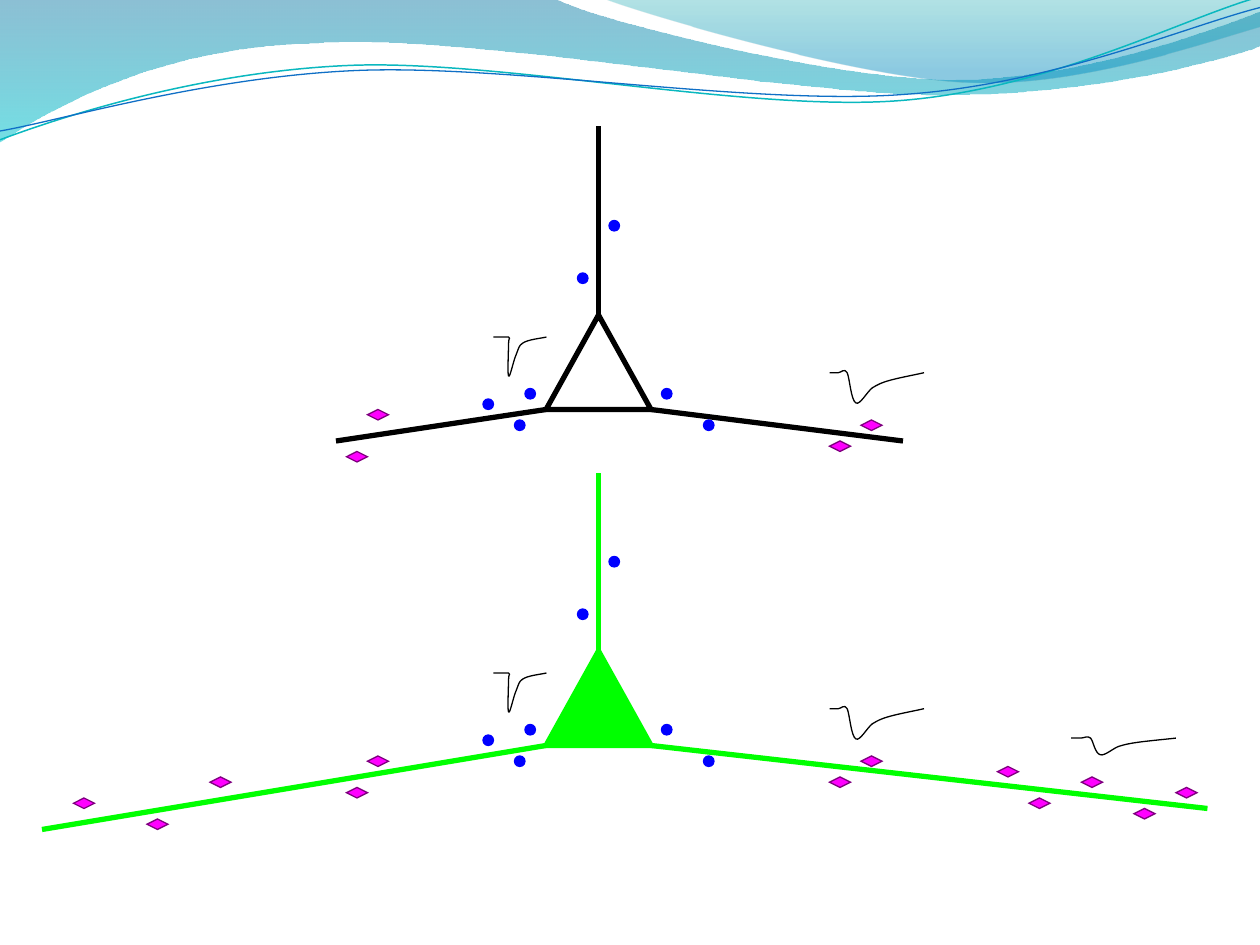
import dataclasses

import lxml.etree
import pptx
import pptx.dml.color
import pptx.enum.shapes
import pptx.oxml.ns
import pptx.util

Cm, Pt = pptx.util.Cm, pptx.util.Pt
RGB = pptx.dml.color.RGBColor.from_string
SHAPE = pptx.enum.shapes.MSO_SHAPE
qn = pptx.oxml.ns.qn

INCH = 12
STEP = 2.54 / INCH
ROW_GAP = 32

BAND_WIDE = [
    (0, 0), (4.4, -0.01), (4.76, 0.17, 6.64, 0.63, 7.58, 0.63),
    (8.53, 0.63, 9.58, 0.26, 10, 0.09), (10.01, 0.36),
    (9.83, 0.44, 8.7, 0.76, 7.46, 0.75), (6.22, 0.75, 3.82, 0.28, 2.57, 0.34),
    (1.29, 0.36, 0.46, 0.83, -0.01, 1.13), (0, 0),
]
BAND_RIGHT = [
    (4.79, -0.01), (5.09, 0.11, 6.82, 0.62, 7.69, 0.65),
    (8.56, 0.69, 9.61, 0.32, 10, 0.21), (10, 0), (4.79, -0.01),
]
WAVE_TEAL = [
    (0, 1.11), (0.48, 0.93, 1.58, 0.57, 2.77, 0.52),
    (3.95, 0.47, 5.93, 0.89, 7.13, 0.8), (8.33, 0.71, 9.38, 0.15, 9.98, -0.02),
]
WAVE_BLUE = [
    (0, 1.04), (0.47, 0.96, 1.64, 0.61, 2.83, 0.56),
    (4.03, 0.51, 5.97, 0.84, 7.17, 0.75), (8.36, 0.67, 9.41, 0.21, 10, 0.06),
]
FAST_TRACE = [
    (0, 0), (0.05, 0, 0.1, 0, 0.12, 0), (0.14, 0.01, 0.12, 0, 0.12, 0.05),
    (0.12, 0.1, 0.11, 0.3, 0.12, 0.31), (0.13, 0.33, 0.16, 0.18, 0.18, 0.14),
    (0.2, 0.09, 0.2, 0.07, 0.23, 0.05), (0.27, 0.02, 0.38, 0.01, 0.42, 0),
]
SLOW_TRACE = [
    (0, 0), (0.03, 0, 0.05, 0, 0.07, 0), (0.09, 0, 0.12, -0.04, 0.14, 0),
    (0.16, 0.04, 0.17, 0.22, 0.21, 0.24), (0.24, 0.26, 0.3, 0.15, 0.34, 0.12),
    (0.39, 0.09, 0.41, 0.08, 0.48, 0.06), (0.55, 0.04, 0.71, 0.01, 0.75, 0),
]
DOTS = [(46, 38), (49, 40), (55, 26), (67, 40), (63, 37), (50, 37), (58, 21)]
SHORT_DIAMONDS = [(33, 43), (35, 39), (79, 42), (82, 40)]
LONG_DIAMONDS = [(33, 75), (35, 72), (79, 74), (82, 72)]
EXTRA_DIAMONDS = [
    (20, 74), (7, 76), (14, 78), (112, 75),
    (108, 77), (103, 74), (98, 76), (95, 73),
]


@dataclasses.dataclass(frozen=True)
class Theme:
    ink: str = "000000"
    paper: str = "FFFFFF"
    grown: str = "00FF00"
    dot: str = "0000FF"
    diamond: str = "FF00FF"
    diamond_edge: str = "800080"
    teal: str = "0AB8BF"
    blue: str = "0F6FC6"
    wide_stops: tuple = ((0, "0074A1", 45), (1, "00C6CF", 55))
    right_stops: tuple = ((0, "00A1A9", 30), (0.8, "008BBF", 45))
    thick: float = 3
    medium: float = 0.85
    thin: float = 0.75


def grid(*values):
    return [Cm(v * STEP) for v in values]


def apply(obj, values):
    for name, value in values.items():
        setattr(obj, name, value)


def bend(sp, segments):
    steps = iter(list(sp.element.iter(qn("a:lnTo"))))
    for seg in segments[1:]:
        step = next(steps)
        if len(seg) == 6:
            step.addprevious(curve := step.makeelement(qn("a:cubicBezTo")))
            for part in (step, next(steps), next(steps)):
                curve.append(part[0])
                part.getparent().remove(part)


class Sketch:
    """Draws styled elements on the current slide."""

    def __init__(self, s, theme):
        self.s, self.theme = s, theme

    def stroke(self, sp, color, width):
        apply(sp.line, {"width": Pt(width)})
        apply(sp.line.color, {"rgb": RGB(color)})

    def shape(self, kind, box, fill, edge, width):
        sp = self.s.shapes.add_shape(kind, *grid(*box))
        sp.shadow.inherit = False
        sp.fill.solid()
        apply(sp.fill.fore_color, {"rgb": RGB(fill)})
        self.stroke(sp, edge, width)
        miter = lxml.etree.SubElement(sp.element.spPr.find(qn("a:ln")), qn("a:miter"))
        miter.set("lim", "800000")

    def line(self, start, end, color):
        sp = self.s.shapes.add_connector(
            pptx.enum.shapes.MSO_CONNECTOR.STRAIGHT, *grid(*start, *end))
        self.stroke(sp, color, self.theme.thick)
        lxml.etree.SubElement(sp.element.spPr, qn("a:effectLst"))

    def outline(self, segments, origin=(0, 0), stretch=(1, 1), closed=False):
        pairs = [seg[i:i + 2] for seg in segments for i in range(0, len(seg), 2)]
        points = [grid(*(o + v * k * INCH for o, v, k in zip(origin, p, stretch)))
                  for p in pairs]
        builder = self.s.shapes.build_freeform(*points[0])
        builder.add_line_segments(points[1:], close=closed)
        sp = builder.convert_to_shape()
        bend(sp, segments)
        sp.shadow.inherit = False
        return sp

    def curve(self, segments, color, width, **place):
        sp = self.outline(segments, **place)
        sp.fill.background()
        self.stroke(sp, color, width)

    def trace(self, segments, origin, stretch=(1, 1)):
        self.curve(segments, self.theme.ink, self.theme.thin, origin=origin, stretch=stretch)

    def band(self, segments, stops):
        sp = self.outline(segments, closed=True)
        sp.line.fill.background()
        sp.fill.gradient()
        apply(sp.fill, {"gradient_angle": 270})
        for stop, (position, color, _) in zip(sp.fill.gradient_stops, stops):
            apply(stop, {"position": position})
            apply(stop.color, {"rgb": RGB(color)})
        for clr, (_, _, opacity) in zip(sp.element.spPr.iter(qn("a:srgbClr")), stops):
            lxml.etree.SubElement(clr, qn("a:alpha")).set("val", str(opacity * 1000))

    def diamonds(self, spots):
        t = self.theme
        for x, y in spots:
            self.shape(SHAPE.DIAMOND, (x, y, 2, 1), t.diamond, t.diamond_edge, t.thin)

    def neuron(self, dy, color, fill, left_tip, right_tip, stalk_base, spots):
        t = self.theme
        self.shape(SHAPE.ISOSCELES_TRIANGLE, (52, 30 + dy, 10, 9), fill, color, t.thick)
        self.line((52, 39 + dy), left_tip, color)
        self.line((62, 39 + dy), right_tip, color)
        self.line((57, stalk_base), (57, stalk_base - 18), color)
        self.trace(FAST_TRACE, (47, 32.1 + dy))
        for x, y in DOTS:
            self.shape(SHAPE.OVAL, (x, y + dy, 1, 1), t.dot, t.dot, t.thin)
        self.diamonds(spots)
        self.trace(SLOW_TRACE, (79, 35.5 + dy))


def main():
    prs = pptx.Presentation()
    apply(prs, {"slide_width": Cm(25.4), "slide_height": Cm(19.05)})
    t = Theme()
    sketch = Sketch(prs.slides.add_slide(prs.slide_layouts[6]), t)
    sketch.band(BAND_WIDE, t.wide_stops)
    sketch.band(BAND_RIGHT, t.right_stops)
    sketch.curve(WAVE_TEAL, t.teal, t.medium)
    sketch.curve(WAVE_BLUE, t.blue, t.thin)
    sketch.neuron(0, t.ink, t.paper, (32, 42), (86, 42), 30, SHORT_DIAMONDS)
    sketch.neuron(ROW_GAP, t.grown, t.grown, (4, 79), (115, 77), 63, LONG_DIAMONDS)
    sketch.diamonds(EXTRA_DIAMONDS)
    sketch.trace(SLOW_TRACE, (102, 70.3), (1.11, 0.55))
    prs.save("out.pptx")


if __name__ == "__main__":
    main()
